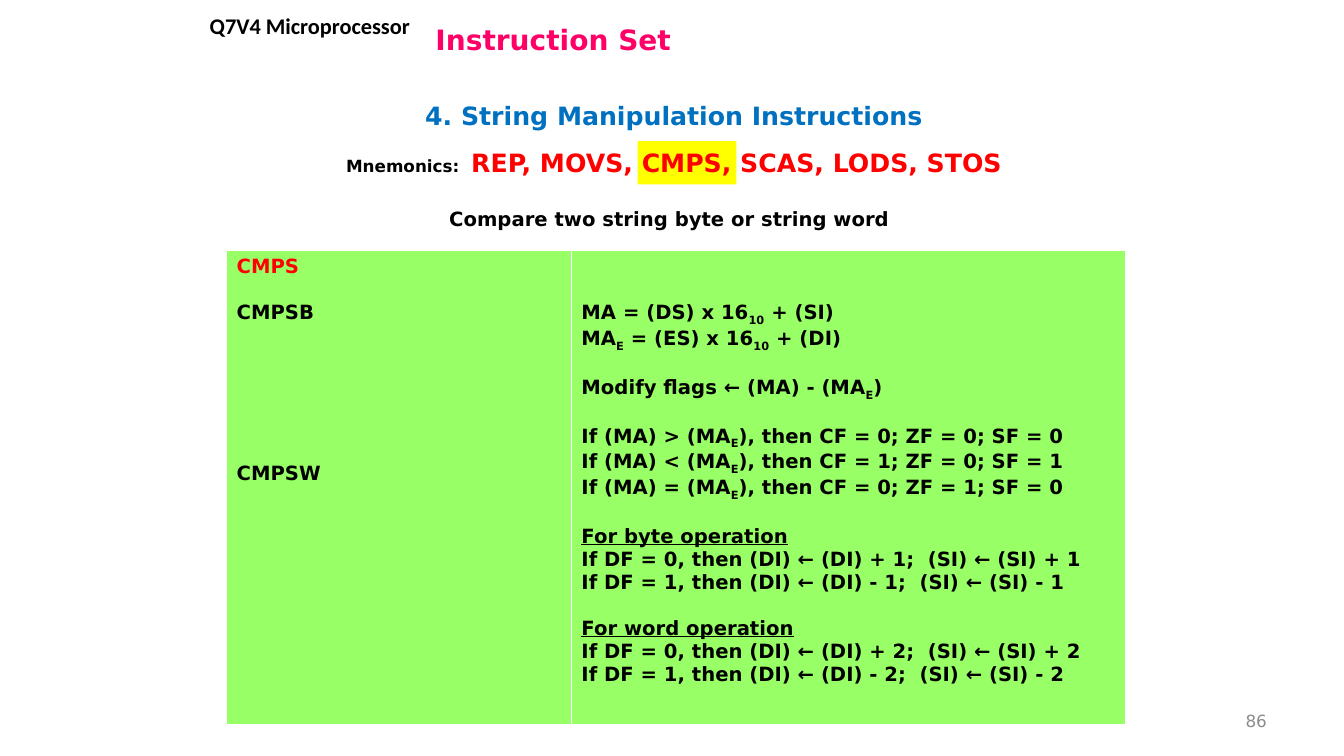
import pptx
import pptx.dml.color
import pptx.enum.shapes
import pptx.enum.text
import pptx.oxml
import pptx.oxml.ns
import pptx.util

Cm = pptx.util.Cm
Pt = pptx.util.Pt
RGBColor = pptx.dml.color.RGBColor
ALIGN = pptx.enum.text.PP_ALIGN
ANCHOR = pptx.enum.text.MSO_ANCHOR

BLACK = RGBColor(0x00, 0x00, 0x00)
RED = RGBColor(0xFF, 0x00, 0x00)
PINK = RGBColor(0xFF, 0x00, 0x66)
BLUE = RGBColor(0x00, 0x70, 0xC0)
GREY = RGBColor(0x8C, 0x8C, 0x8C)
YELLOW = RGBColor(0xFF, 0xFF, 0x00)
GREEN = RGBColor(0x99, 0xFF, 0x66)

BODY_FONT = "DejaVu Sans"
LINE = 16.4  # height of one table line in points
BORDERS = {"lnL": 1, "lnR": 1, "lnT": 1, "lnB": 3}

# Each line: lines skipped above it, text with |subscripts| between bars, format
MNEMONIC_LINES = [
    (0, "CMPS", {"color": RED}),
    (1, "CMPSB", {}),
    (6, "CMPSW", {}),
]
OPERATION_LINES = [
    (0, "MA = (DS) x 16|10| + (SI)", {}),
    (0, "MA|E| = (ES) x 16|10| + (DI)", {}),
    (1, "Modify flags ← (MA) - (MA|E|)", {}),
]
for skipped, sign, carry, zero, negative in [(1, ">", 0, 0, 0), (0, "<", 1, 0, 1), (0, "=", 0, 1, 0)]:
    OPERATION_LINES.append(
        (skipped, f"If (MA) {sign} (MA|E|), then CF = {carry}; ZF = {zero}; SF = {negative}", {}))
for unit, step in [("byte", 1), ("word", 2)]:
    OPERATION_LINES.append((1, f"For {unit} operation", {"underline": True}))
    for direction, sign in enumerate("+-"):
        OPERATION_LINES.append(
            (0, f"If DF = {direction}, then (DI) ← (DI) {sign} {step};  (SI) ← (SI) {sign} {step}", {}))


def add_run(paragraph, text, color=BLACK, **formats):
    run = paragraph.add_run()
    run.text = text
    values = {"name": BODY_FONT, "size": Pt(14), "bold": True, **formats}
    for name, value in values.items():
        setattr(run.font, name, value)
    run.font.color.rgb = color
    return run


def fill_frame(frame, runs, alignment=ALIGN.LEFT, anchor=ANCHOR.TOP, wrap=True):
    """Write one paragraph made of (text, format) runs."""
    values = {"word_wrap": wrap, "vertical_anchor": anchor,
              "auto_size": pptx.enum.text.MSO_AUTO_SIZE.NONE}
    for name, value in values.items():
        setattr(frame, name, value)
    paragraph = frame.paragraphs[0]
    paragraph.alignment = alignment
    for text, formats in runs:
        add_run(paragraph, text, **formats)


def add_text(slide, box, runs, **layout):
    fill_frame(slide.shapes.add_textbox(*box).text_frame, runs, **layout)


def place_title(slide, box):
    title = slide.shapes.title
    for name, value in zip(("left", "top", "width", "height"), box):
        setattr(title, name, value)
    fill_frame(title.text_frame, [("Instruction Set", {"size": Pt(20), "color": PINK})],
               anchor=ANCHOR.MIDDLE)


def add_introduction(slide, left, top, width):
    """Section heading, mnemonics with the current one marked, and caption."""
    marker = slide.shapes.add_shape(pptx.enum.shapes.MSO_SHAPE.RECTANGLE,
                                    left + Cm(11.1), top + Cm(1.2), Cm(2.49), Cm(1.09))
    marker.shadow.inherit = False
    marker.fill.solid()
    marker.fill.fore_color.rgb = YELLOW
    marker.line.fill.background()
    add_text(slide, (left, top, width, Cm(1.09)),
             [("4. String Manipulation Instructions", {"size": Pt(18), "color": BLUE})],
             alignment=ALIGN.CENTER, anchor=ANCHOR.MIDDLE)
    add_text(slide, (left, top + Cm(1.24), width, Cm(1.02)),
             [("Mnemonics:  ", {"size": Pt(12)}),
              ("REP, MOVS, CMPS, SCAS, LODS, STOS", {"size": Pt(18), "color": RED})],
             alignment=ALIGN.CENTER)
    add_text(slide, (left + Cm(6.1), top + Cm(2.72), Cm(11.79), Cm(0.86)),
             [("Compare two string byte or string word", {})], wrap=False)


def add_borders(cell):
    properties = cell._tc.get_or_add_tcPr()
    for position, (side, points) in enumerate(BORDERS.items()):
        properties.insert(position, pptx.oxml.parse_xml(
            f'<a:{side} {pptx.oxml.ns.nsdecls("a")} w="{Pt(points)}"><a:solidFill>'
            f'<a:srgbClr val="FFFFFF"/></a:solidFill></a:{side}>'))


def fill_cell(cell, lines):
    cell.fill.solid()
    cell.fill.fore_color.rgb = GREEN
    add_borders(cell)
    frame = cell.text_frame
    for index, (skipped, text, formats) in enumerate(lines):
        paragraph = frame.add_paragraph() if index else frame.paragraphs[0]
        paragraph.space_before = Pt(skipped * LINE)
        for part, piece in enumerate(text.split("|")):
            run = add_run(paragraph, piece, **formats)
            if part % 2:
                run._r.get_or_add_rPr().set("baseline", "-25000")


def add_instruction_table(slide, box):
    table = slide.shapes.add_table(1, 2, *box).table
    table.columns[0].width = Cm(8.69)
    table.columns[1].width = box[2] - Cm(8.69)
    fill_cell(table.cell(0, 0), MNEMONIC_LINES)
    operation = table.cell(0, 1)
    fill_cell(operation, OPERATION_LINES)
    operation.margin_top = Cm(0.13) + Pt(2 * LINE)


def main():
    presentation = pptx.Presentation()
    presentation.slide_width = Cm(33.87)
    presentation.slide_height = Cm(19.05)
    slide = presentation.slides.add_slide(presentation.slide_layouts.get_by_name("Title Only"))
    place_title(slide, (Cm(10.72), Cm(0.32), Cm(22.3), Cm(1.35)))
    add_text(slide, (Cm(4.42), Cm(0.18), Cm(6.78), Cm(0.94)),
             [("Q7V4 Microprocessor", {"name": "Calibri", "size": Pt(16)})],
             alignment=ALIGN.CENTER)
    add_introduction(slide, Cm(4.97), Cm(2.36), Cm(24.03))
    add_instruction_table(slide, (Cm(5.71), Cm(6.3), Cm(22.66), Cm(12)))
    add_text(slide, (Cm(24.28), Cm(17.65), Cm(7.9), Cm(1.02)),
             [("86", {"size": Pt(12), "bold": False, "color": GREY})],
             alignment=ALIGN.RIGHT, anchor=ANCHOR.MIDDLE)
    presentation.save("out.pptx")


if __name__ == "__main__":
    main()
